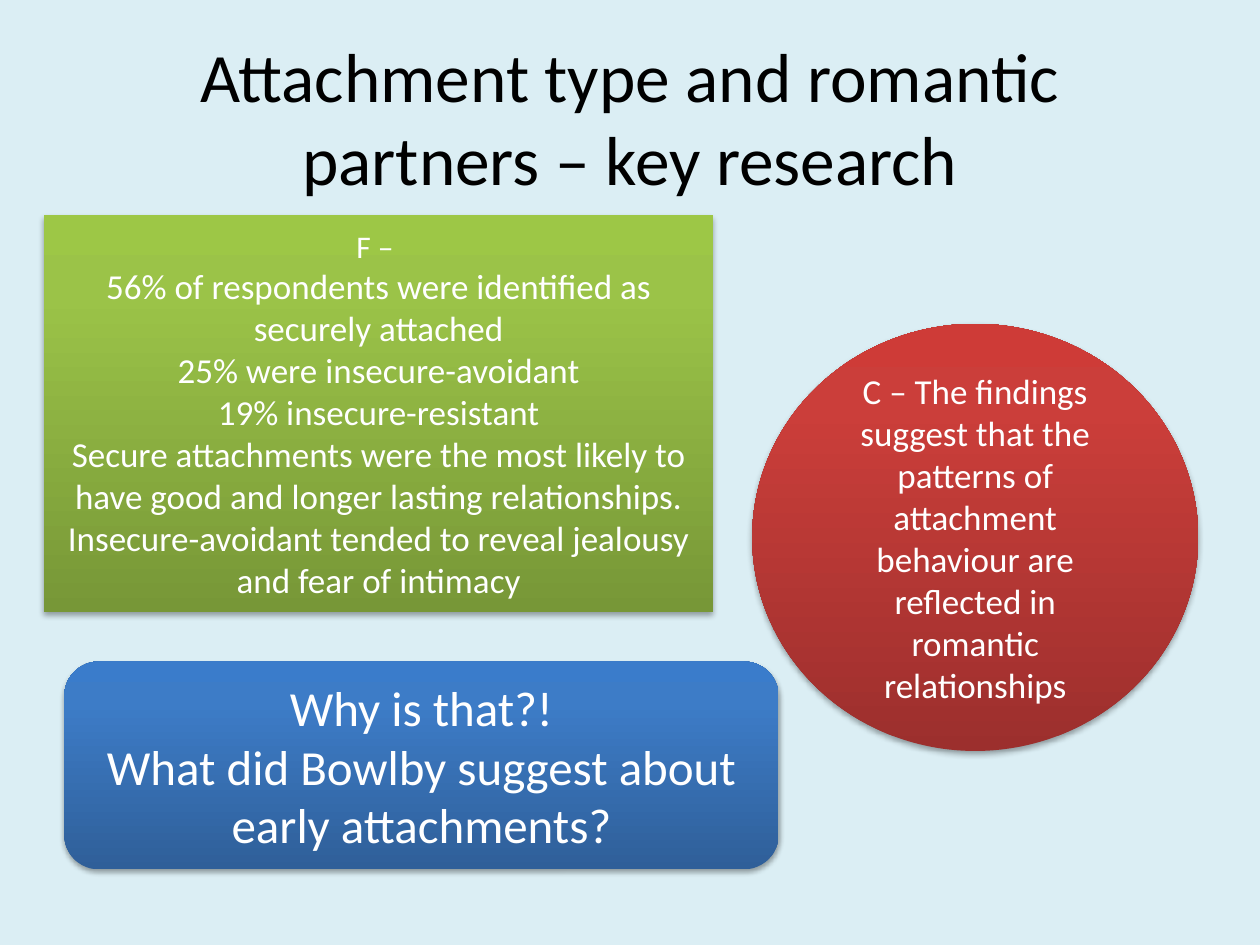
from copy import deepcopy
from dataclasses import dataclass

from lxml.etree import SubElement
from pptx import Presentation
from pptx.dml.color import RGBColor
from pptx.enum.shapes import MSO_SHAPE as Preset
from pptx.enum.text import MSO_ANCHOR as Anchor, MSO_AUTO_SIZE as AutoSize, PP_ALIGN as Align
from pptx.oxml.ns import qn
from pptx.shapes.autoshape import Shape
from pptx.slide import Slide
from pptx.text.text import TextFrame
from pptx.util import Inches, Pt

FONT = "Calibri"
COLORS = {
    "background": "DBEEF4",
    "title": "000000",
    "card_text": "FFFFFF",
    "shadow": "000000",
}
GRADIENTS = {
    "red": ("9C2F2D", "CB3E3A", "CE3B37"),
    "green": ("779737", "9BC348", "9DC746"),
    "blue": ("2F5F99", "3D7CC7", "3A7CCB"),
}
MIDDLE_STOP = 0.8


@dataclass(frozen=True)
class Card:
    preset: Preset
    left: float
    top: float
    width: float
    height: float
    gradient: str
    paragraphs: tuple[tuple[str, float], ...]


CARDS = (
    Card(Preset.OVAL, 5.97, 2.57, 3.54, 3.39, "red", (
        ("C – The findings suggest that the patterns of attachment behaviour "
         "are reflected in romantic relationships", 20),
    )),
    Card(Preset.RECTANGLE, 0.35, 1.71, 5.31, 3.15, "green", (
        ("F – ", 18),
        ("56% of respondents were identified as securely attached", 20),
        ("25% were insecure-avoidant", 20),
        ("19% insecure-resistant", 20),
        ("Secure attachments were the most likely to have good and longer "
         "lasting relationships.", 20),
        ("Insecure-avoidant tended to reveal jealousy and fear of intimacy", 20),
    )),
    Card(Preset.ROUNDED_RECTANGLE, 0.51, 5.25, 5.67, 1.65, "blue", (
        ("Why is that?!", 28),
        ("What did Bowlby suggest about early attachments?", 28),
    )),
)


def write_text(frame: TextFrame, paragraphs: tuple[tuple[str, float], ...], color: str) -> None:
    frame.text = "\n".join(text for text, _ in paragraphs)
    frame.word_wrap = True
    frame.auto_size = AutoSize.NONE
    frame.vertical_anchor = Anchor.MIDDLE
    for para, (_, size) in zip(frame.paragraphs, paragraphs):
        para.alignment = Align.CENTER
        for span in para.runs:
            span.font.name = FONT
            span.font.size = Pt(size)
            span.font.color.rgb = RGBColor.from_string(COLORS[color])


def fill_gradient(box: Shape, name: str) -> None:
    box.fill.gradient()
    box.fill.gradient_angle = 90
    stop_list = next(box.element.spPr.iter(qn("a:gsLst")))
    stop_list.insert(1, deepcopy(stop_list[0]))
    for stop, position, color in zip(box.fill.gradient_stops, (0, MIDDLE_STOP, 1), GRADIENTS[name]):
        stop.position = position
        stop.color.rgb = RGBColor.from_string(color)


def add_shadow(box: Shape) -> None:
    box.shadow.inherit = False
    effects = box.element.spPr.find(qn("a:effectLst"))
    shadow = SubElement(effects, qn("a:outerShdw"), blurRad=str(Pt(3.1)),
                        dist=str(Pt(1.8)), dir="5400000", rotWithShape="0")
    color = SubElement(shadow, qn("a:srgbClr"), val=COLORS["shadow"])
    SubElement(color, qn("a:alpha"), val="35000")


def add_card(page: Slide, card: Card) -> None:
    box = page.shapes.add_shape(card.preset, Inches(card.left), Inches(card.top),
                                Inches(card.width), Inches(card.height))
    fill_gradient(box, card.gradient)
    box.line.fill.background()
    add_shadow(box)
    write_text(box.text_frame, card.paragraphs, "card_text")


def add_title(page: Slide) -> None:
    title = page.shapes.title
    title.left, title.top = Inches(0.5), Inches(0.3)
    title.width, title.height = Inches(9), Inches(1.25)
    heading = "Attachment type and romantic partners – key research"
    write_text(title.text_frame, ((heading, 39.6),), "title")


def main() -> None:
    deck = Presentation()
    deck.slide_width, deck.slide_height = Inches(10), Inches(7.5)
    page = deck.slides.add_slide(deck.slide_layouts[5])
    page.background.fill.solid()
    page.background.fill.fore_color.rgb = RGBColor.from_string(COLORS["background"])
    add_title(page)
    for card in CARDS:
        add_card(page, card)
    deck.save("out.pptx")


if __name__ == "__main__":
    main()
